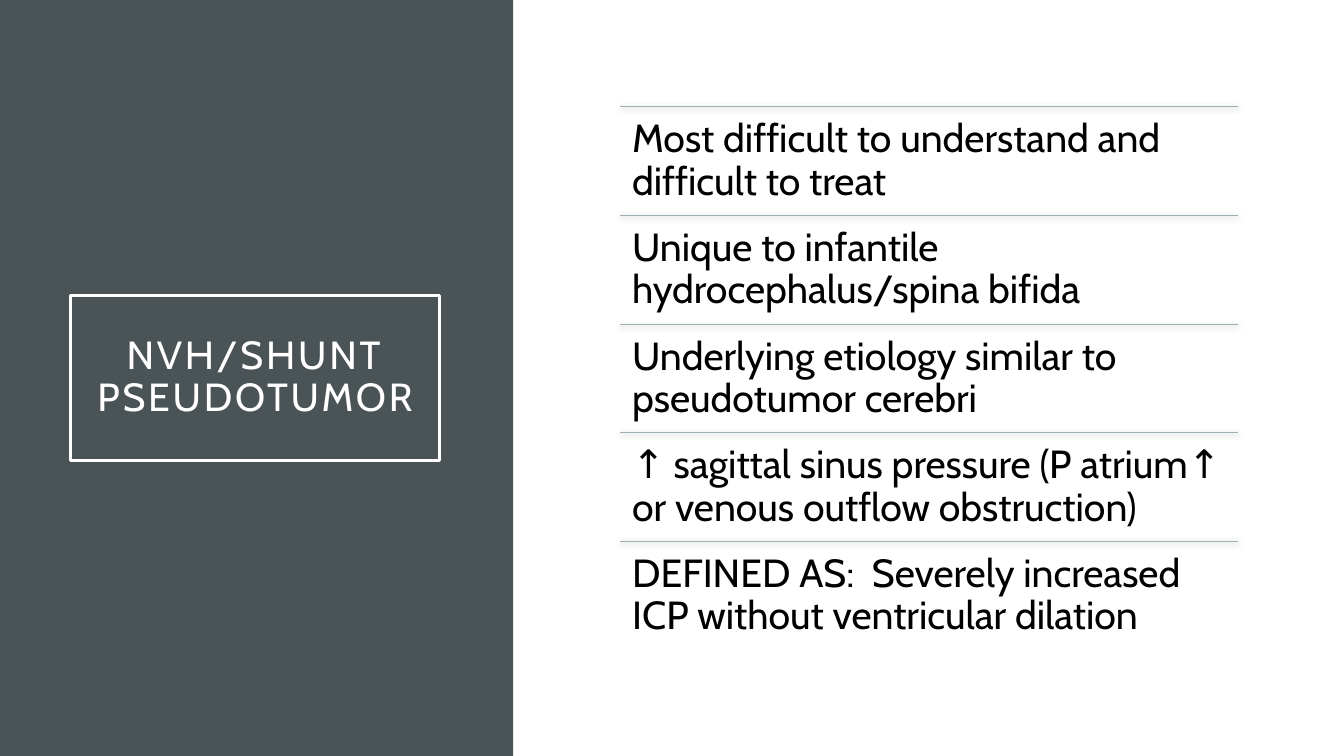
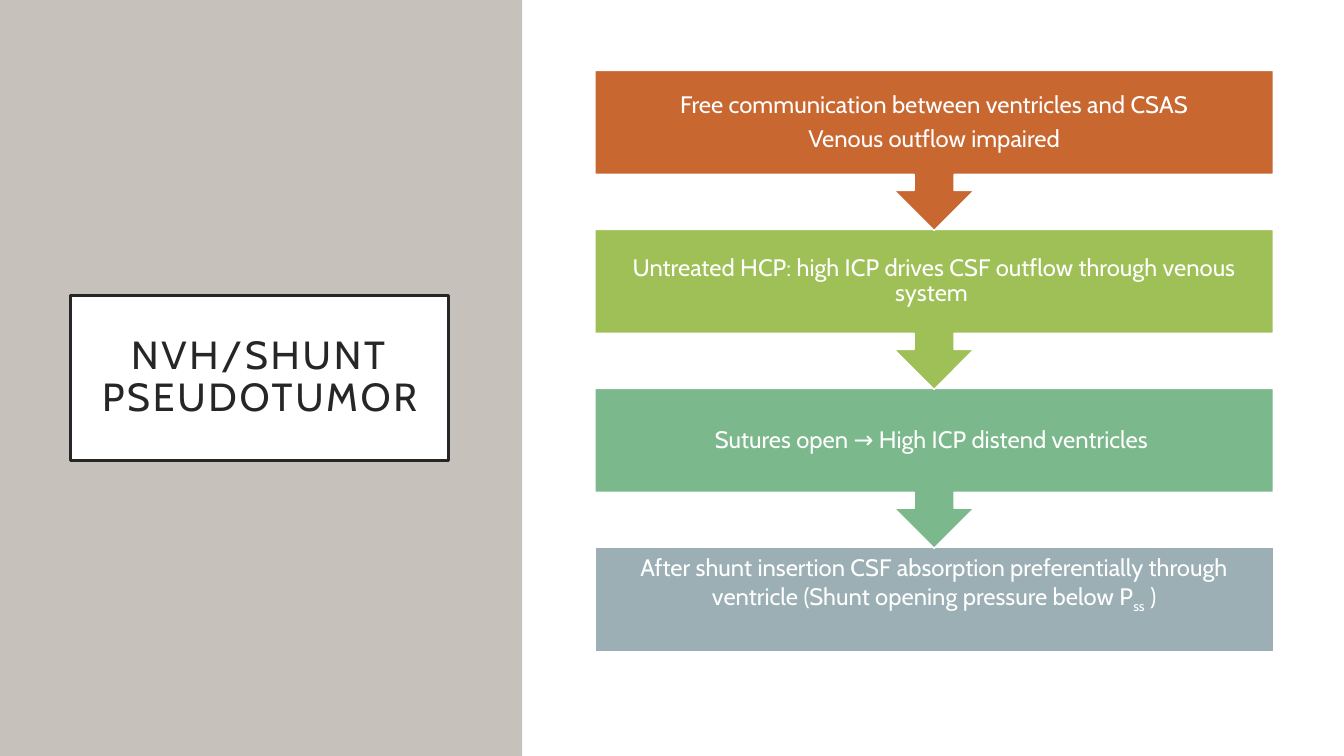
from lxml import etree
from pptx import Presentation
from pptx.dml.color import RGBColor
from pptx.enum import shapes, text
from pptx.oxml import ns
from pptx.util import Inches, Pt

FONT = "Cabin"
WHITE = RGBColor(0xFF, 0xFF, 0xFF)
BLACK = RGBColor(0x00, 0x00, 0x00)
INK = RGBColor(0x26, 0x26, 0x26)
SLATE = RGBColor(0x4A, 0x53, 0x56)
STONE = RGBColor(0xC6, 0xC1, 0xBA)
MIST = RGBColor(0x9B, 0xAF, 0xB5)
ORANGE = RGBColor(0xC9, 0x67, 0x31)
LIME = RGBColor(0x9F, 0xC0, 0x57)
GREEN = RGBColor(0x7B, 0xB8, 0x8C)

KIND = shapes.MSO_SHAPE
MIDDLE = text.MSO_ANCHOR.MIDDLE
TOP = text.MSO_ANCHOR.TOP
CENTER = text.PP_ALIGN.CENTER
LEFT = text.PP_ALIGN.LEFT

TITLE = "NVH/SHUNT PSEUDOTUMOR"
FACTS = [
    "Most difficult to understand and difficult to treat",
    "Unique to infantile hydrocephalus/spina bifida",
    "Underlying etiology similar to pseudotumor cerebri",
    "↑ sagittal sinus pressure (P atrium↑ or venous outflow obstruction)",
    "DEFINED AS:  Severely increased ICP without ventricular dilation",
]
# Each step: colour, then paragraphs, each a list of runs
STEPS = [
    (ORANGE, [["Free communication between ventricles and CSAS"],
              ["Venous outflow impaired"]]),
    (LIME, [["Untreated HCP: high ICP drives CSF outflow through venous system "]]),
    (GREEN, [["Sutures open → High ICP distend ventricles "]]),
    (MIST, [["After shunt insertion CSF absorption preferentially through "
             "ventricle (Shunt opening pressure below P", "ss", " )"]]),
]


def add_box(slide, kind, box, fill=None, line=None, width=1):
    shape = slide.shapes.add_shape(kind, *map(Inches, box))
    shape.shadow.inherit = False
    if fill is None:
        shape.fill.background()
    else:
        shape.fill.solid()
        shape.fill.fore_color.rgb = fill
    if line is None:
        shape.line.fill.background()
    else:
        shape.line.color.rgb = line
        shape.line.width = Pt(width)
    return shape


def set_text(shape, paras, size, color, inset, align=CENTER, anchor=MIDDLE):
    """Fill a shape with paragraphs; every second run is a subscript."""
    frame = shape.text_frame
    frame.word_wrap = True
    frame.vertical_anchor = anchor
    frame.margin_left = frame.margin_right = Inches(inset)
    frame.margin_top = frame.margin_bottom = Inches(inset)
    for i, runs in enumerate(paras):
        para = frame.add_paragraph() if i else frame.paragraphs[0]
        para.alignment = align
        para.line_spacing = 0.9
        if i < len(paras) - 1:
            para.space_after = Pt(0.35 * size)
        for j, words in enumerate(runs):
            run = para.add_run()
            run.text = words
            if j % 2:
                run.font._element.set("baseline", "-25000")
        para.font.name = FONT
        para.font.size = Pt(size)
        para.font.color.rgb = color
    return frame


def add_panel(slide, width, fill, color, plate=None):
    """Side band with the framed title."""
    add_box(slide, KIND.RECTANGLE, (0, 0, width, 7.5), fill)
    frame = add_box(slide, KIND.RECTANGLE, (0.7, 2.93, width - 1.43, 1.64),
                    plate, color, 2.5)
    body = set_text(frame, [[TITLE]], 28, color, 0.2)
    body.paragraphs[0].runs[0].font._element.set("spc", "200")


def add_rule(slide, left, top, width):
    """Thin line with a soft shadow below."""
    rule = slide.shapes.add_connector(
        shapes.MSO_CONNECTOR.STRAIGHT,
        *map(Inches, (left, top, left + width, top)))
    rule.line.color.rgb = MIST
    rule.line.width = Pt(0.5)
    effect = etree.SubElement(rule._element.spPr, ns.qn("a:effectLst"))
    shade = etree.SubElement(
        effect, ns.qn("a:outerShdw"), blurRad=str(Pt(4.4)), dist=str(Pt(1.2)),
        dir="5400000", algn="ctr", rotWithShape="0")
    tone = etree.SubElement(shade, ns.qn("a:srgbClr"), val=str(BLACK))
    etree.SubElement(tone, ns.qn("a:alpha"), val="45000")


def add_list(slide, box, facts):
    """Equal rows, each under a rule."""
    left, top, width, height = box
    row = height / len(facts)
    for i, fact in enumerate(facts):
        y = top + i * row
        add_rule(slide, left, y, width)
        cell = slide.shapes.add_textbox(*map(Inches, (left, y, width, row)))
        set_text(cell, [[fact]], 28, BLACK, 0.12, LEFT, TOP)


def add_flow(slide, box, steps):
    """Stack of arrow callouts ending in a plain box, lowest at the back."""
    left, top, width, height = box
    last = len(steps) - 1
    end = 1.04
    pitch = (height - end) / last
    for i, (fill, paras) in reversed(list(enumerate(steps))):
        kind, tall = KIND.DOWN_ARROW_CALLOUT, pitch + 0.01
        if i == last:
            kind, tall = KIND.RECTANGLE, end
        step = add_box(slide, kind, (left, top + i * pitch, width, tall),
                       fill, WHITE)
        body = set_text(step, paras, 17, WHITE, 0.13)
        if i == last:
            body.vertical_anchor = TOP
            body.margin_top = Inches(0.09)


def main():
    deck = Presentation()
    deck.slide_width = Inches(13.33)
    deck.slide_height = Inches(7.5)
    blank = deck.slide_layouts[6]

    # Key facts
    slide = deck.slides.add_slide(blank)
    add_panel(slide, 5.09, SLATE, WHITE)
    add_list(slide, (6.15, 1.06, 6.13, 5.39), FACTS)

    # Mechanism
    slide = deck.slides.add_slide(blank)
    add_panel(slide, 5.18, STONE, INK, WHITE)
    add_flow(slide, (5.9, 0.7, 6.73, 5.77), STEPS)

    deck.save("out.pptx")


if __name__ == "__main__":
    main()
